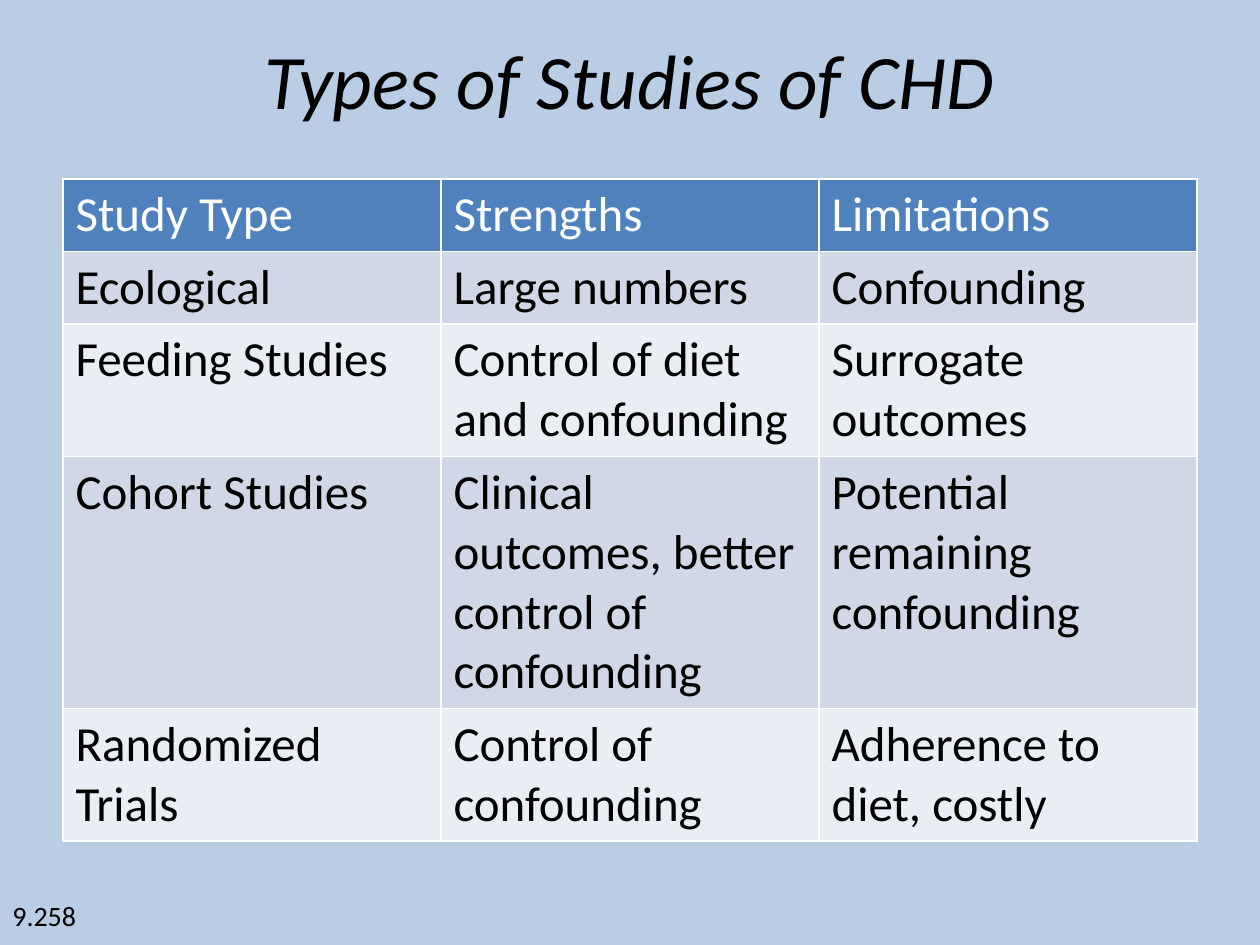
from dataclasses import dataclass

import pptx
import pptx.dml.color
import pptx.enum.text
import pptx.util

Inches = pptx.util.Inches
FONT = "Calibri"
COLORS = {
    "background": "B9CDE5",
    "header": "4F81BD",
    "band_dark": "D0D8E8",
    "band_light": "E9EDF4",
    "text": "000000",
    "header_text": "FFFFFF",
}


@dataclass
class Label:
    text: str
    left: float
    top: float
    width: float
    height: float
    size: int
    italic: bool = False
    centered: bool = False


@dataclass
class Study:
    kind: str
    strengths: str
    limitations: str
    height: float


LABELS = [
    Label("Types of Studies of CHD", 0.5, 0, 9, 1.25, 44, True, True),
    Label("9.258", 0, 7.08, 2.42, 0.37, 16),
]
ROWS = [
    Study("Study Type", "Strengths", "Limitations", 0.57),
    Study("Ecological", "Large numbers", "Confounding", 0.57),
    Study("Feeding Studies", "Control of diet and confounding", "Surrogate outcomes", 1.05),
    Study(
        "Cohort Studies",
        "Clinical outcomes, better control of confounding",
        "Potential remaining confounding",
        2,
    ),
    Study("Randomized Trials", "Control of confounding", "Adherence to diet, costly", 1.05),
]


def color(name: str) -> pptx.dml.color.RGBColor:
    return pptx.dml.color.RGBColor.from_string(COLORS[name])


def format_text(frame, size: int, color_name: str, italic: bool = False) -> None:
    for para in frame.paragraphs:
        for span in para.runs:
            span.font.name = FONT
            span.font.size = pptx.util.Pt(size)
            span.font.bold = False
            span.font.italic = italic
            span.font.color.rgb = color(color_name)


def draw_label(page, label: Label) -> None:
    box = page.shapes.add_textbox(
        Inches(label.left), Inches(label.top), Inches(label.width), Inches(label.height)
    )
    frame = box.text_frame
    frame.word_wrap = True
    frame.vertical_anchor = pptx.enum.text.MSO_ANCHOR.MIDDLE
    frame.text = label.text
    if label.centered:
        frame.paragraphs[0].alignment = pptx.enum.text.PP_ALIGN.CENTER
    format_text(frame, label.size, "text", label.italic)


def draw_table(page, studies: list[Study]) -> None:
    height = sum(study.height for study in studies)
    table = page.shapes.add_table(
        len(studies), 3, Inches(0.5), Inches(1.42), Inches(9), Inches(height)
    ).table
    for index, study in enumerate(studies):
        table.rows[index].height = Inches(study.height)
        fill = "header" if index == 0 else "band_dark" if index % 2 else "band_light"
        texts = (study.kind, study.strengths, study.limitations)
        for cell, text in zip(table.rows[index].cells, texts):
            cell.fill.solid()
            cell.fill.fore_color.rgb = color(fill)
            cell.text_frame.text = text
            format_text(cell.text_frame, 28, "text" if index else "header_text")


def main() -> None:
    deck = pptx.Presentation()
    deck.slide_width = Inches(10)
    deck.slide_height = Inches(7.5)
    page = deck.slides.add_slide(deck.slide_layouts[6])
    page.background.fill.solid()
    page.background.fill.fore_color.rgb = color("background")
    draw_table(page, ROWS)
    for label in LABELS:
        draw_label(page, label)
    deck.save("out.pptx")


if __name__ == "__main__":
    main()
